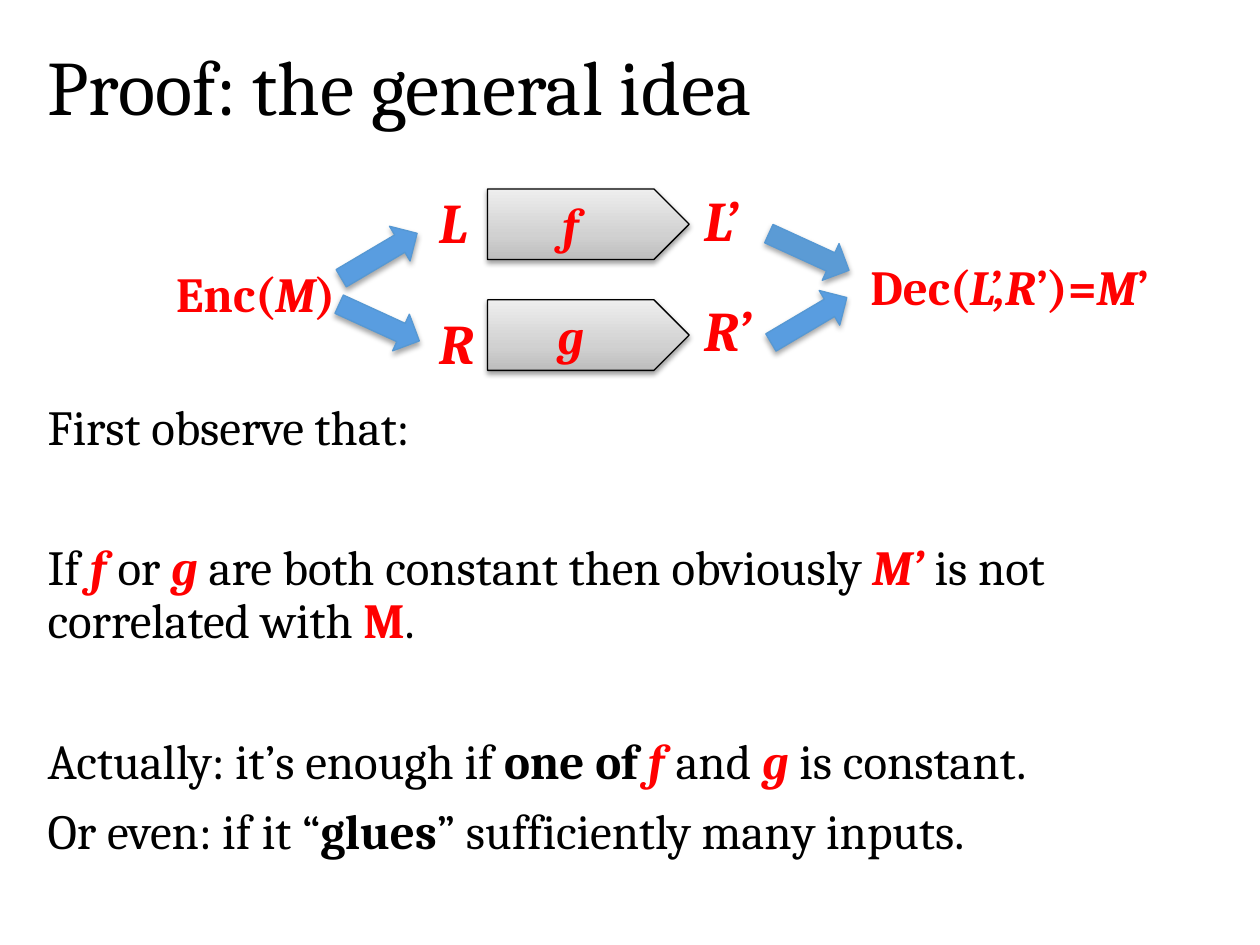
from pptx import Presentation
from pptx.dml.color import RGBColor
from pptx.enum.shapes import MSO_SHAPE
from pptx.enum.text import MSO_ANCHOR, MSO_AUTO_SIZE, PP_ALIGN
from pptx.oxml.ns import qn
from pptx.util import Inches, Pt
from lxml import etree

ARROW = MSO_SHAPE.RIGHT_ARROW
LEFT, CENTER = PP_ALIGN.LEFT, PP_ALIGN.CENTER
MIDDLE = MSO_ANCHOR.MIDDLE
NO_FIT, GROW = MSO_AUTO_SIZE.NONE, MSO_AUTO_SIZE.SHAPE_TO_FIT_TEXT

FONT = "Cambria"
BLACK, RED = "000000", "FF0000"
BLUE, BRIGHT_BLUE, BLUE_EDGE = "5B9BD5", "599DE0", "5698D3"
SILVER_STOPS = ((0, "BDBDBD"), (35, "D1D1D1"), (100, "EEEEEE"))

PLAIN = {"color": BLACK, "bold": False, "italic": False}
STRONG = {**PLAIN, "bold": True}
RED_BOLD = {**STRONG, "color": RED}
SYMBOL = {**RED_BOLD, "italic": True}

ARGUMENT = (
    (10, [("First observe that:", PLAIN)]),
    (50, [("If ", PLAIN), ("f ", SYMBOL), ("or ", PLAIN), ("g ", SYMBOL),
          ("are both constant then obviously ", PLAIN), ("M’ ", SYMBOL),
          ("is not correlated with ", PLAIN), ("M", RED_BOLD), (".", PLAIN)]),
    (50, [("Actually: it’s enough if ", PLAIN), ("one of ", STRONG), ("f", SYMBOL),
          (" and ", PLAIN), ("g", SYMBOL), (" is constant.", PLAIN)]),
    (10, [("Or even: if it “", PLAIN), ("glues", STRONG),
          ("” sufficiently many inputs.", PLAIN)]),
)


def rgb(value):
    """Turn a hex string into a colour."""
    return RGBColor.from_string(value)


def inches(*lengths):
    """Turn numbers into inch lengths."""
    return [Inches(length) for length in lengths]


def apply(target, values):
    """Set every attribute in a dict of format values."""
    for key, value in values.items():
        setattr(target, key, value)


def write(paragraph, runs, size, **layout):
    """Fill a paragraph with styled runs."""
    apply(paragraph, layout)
    for text, style in runs:
        run = paragraph.add_run()
        run.text = text
        apply(run.font, {"name": FONT, "size": Pt(size),
                         "bold": style["bold"], "italic": style["italic"]})
        run.font.color.rgb = rgb(style["color"])


def add_label(slide, box, runs, size, wrap=True):
    """Add a one-line label in a text box."""
    frame = slide.shapes.add_textbox(*inches(*box)).text_frame
    apply(frame, {"word_wrap": wrap, "auto_size": GROW})
    write(frame.paragraphs[0], runs, size)


def add_shadow(shape, opacity, distance):
    """Give a shape a soft shadow that falls straight down."""
    shape.shadow.inherit = False
    effects = shape._element.spPr.find(qn("a:effectLst"))
    shadow = etree.SubElement(effects, qn("a:outerShdw"), blurRad=str(Pt(3.1)),
                              dist=str(Pt(distance)), dir="5400000", rotWithShape="0")
    color = etree.SubElement(shadow, qn("a:srgbClr"), val=BLACK)
    etree.SubElement(color, qn("a:alpha"), val=str(opacity * 1000))


def add_arrow(slide, box, edge, opacity, distance):
    """Add a right arrow with an outline and a shadow."""
    arrow = slide.shapes.add_shape(ARROW, *inches(*box))
    arrow.line.color.rgb = rgb(edge)
    arrow.line.width = Pt(0.75)
    add_shadow(arrow, opacity, distance)
    return arrow


def fill_silver(shape):
    """Fill a shape with grey that gets lighter towards the top."""
    shape.fill.gradient()
    shape.fill.gradient_angle = 90
    stops = shape._element.spPr.find(".//" + qn("a:gsLst"))
    for stop in list(stops):
        stops.remove(stop)
    for position, color in SILVER_STOPS:
        stop = etree.SubElement(stops, qn("a:gs"), pos=str(position * 1000))
        etree.SubElement(stop, qn("a:srgbClr"), val=color)


def add_title(slide, box, text):
    """Place and format the title."""
    title = slide.shapes.title
    apply(title, dict(zip(("left", "top", "width", "height"), inches(*box))))
    apply(title.text_frame, {"vertical_anchor": MIDDLE, "auto_size": NO_FIT,
                             "word_wrap": True})
    write(title.text_frame.paragraphs[0], [(text, PLAIN)], 44,
          alignment=LEFT, line_spacing=0.9)


def add_tampering(slide, box, function):
    """Add the block arrow of a tampering function."""
    block = add_arrow(slide, box, BLACK, 38, 1.6)
    apply(block.adjustments, {})
    block.adjustments[0], block.adjustments[1] = 1, 0.5
    fill_silver(block)
    block.text_frame.vertical_anchor = MIDDLE
    write(block.text_frame.paragraphs[0], [(function, SYMBOL)], 28, alignment=CENTER)


def add_flow(slide, box, angle, color):
    """Add a slanted arrow between the steps."""
    flow = add_arrow(slide, box, BLUE_EDGE, 35, 1.8)
    flow.rotation = angle
    flow.fill.solid()
    flow.fill.fore_color.rgb = rgb(color)


def add_diagram(slide, left, top):
    """Draw encoding, tampering of both halves and decoding."""
    halves = (("L", 0.02, 0.55, "f", 0.08, "L’", 0, 0.65),
              ("R", 0.98, 0.48, "g", 0.96, "R’", 0.88, 0.59))
    for half, half_y, half_w, function, block_y, changed, changed_y, changed_w in halves:
        add_label(slide, (left + 2.09, top + half_y, half_w, 0.64), [(half, SYMBOL)], 32)
        add_tampering(slide, (left + 2.57, top + block_y, 1.6, 0.56), function)
        add_label(slide, (left + 4.19, top + changed_y, changed_w, 0.64),
                  [(changed, SYMBOL)], 32, wrap=False)

    add_label(slide, (left, top + 0.62, 1.5, 0.57),
              [("Enc(", RED_BOLD), ("M", SYMBOL), (")", RED_BOLD)], 28, wrap=False)
    add_label(slide, (left + 5.51, top + 0.57, 2.54, 0.57),
              [("Dec(", RED_BOLD), ("L’,R", SYMBOL), ("’)=", RED_BOLD),
               ("M", SYMBOL), ("’", RED_BOLD)], 28, wrap=False)

    rising, falling = 329.4, 24.6
    for x, y, angle, color in ((1.36, 0.45, rising, BRIGHT_BLUE),
                               (1.36, 0.98, falling, BRIGHT_BLUE),
                               (4.77, 0.96, rising, BRIGHT_BLUE),
                               (4.77, 0.42, falling, BLUE)):
        add_flow(slide, (left + x, top + y, 0.7, 0.32), angle, color)


def add_argument(slide, box):
    """Write the steps of the argument."""
    frame = slide.shapes.add_textbox(*inches(*box)).text_frame
    apply(frame, {"word_wrap": True, "auto_size": NO_FIT})
    for index, (gap, runs) in enumerate(ARGUMENT):
        paragraph = frame.add_paragraph() if index else frame.paragraphs[0]
        write(paragraph, runs, 28, line_spacing=0.9, space_before=Pt(gap))


def main():
    """Build the slide and save it."""
    deck = Presentation()
    apply(deck, {"slide_width": Inches(10), "slide_height": Inches(7.5)})
    slide = deck.slides.add_slide(deck.slide_layouts[5])
    add_title(slide, (0.28, 0.29, 9.53, 0.86), "Proof: the general idea")
    add_argument(slide, (0.28, 3.15, 9.53, 3.78))
    add_diagram(slide, 1.3, 1.42)
    deck.save("out.pptx")


if __name__ == "__main__":
    main()
